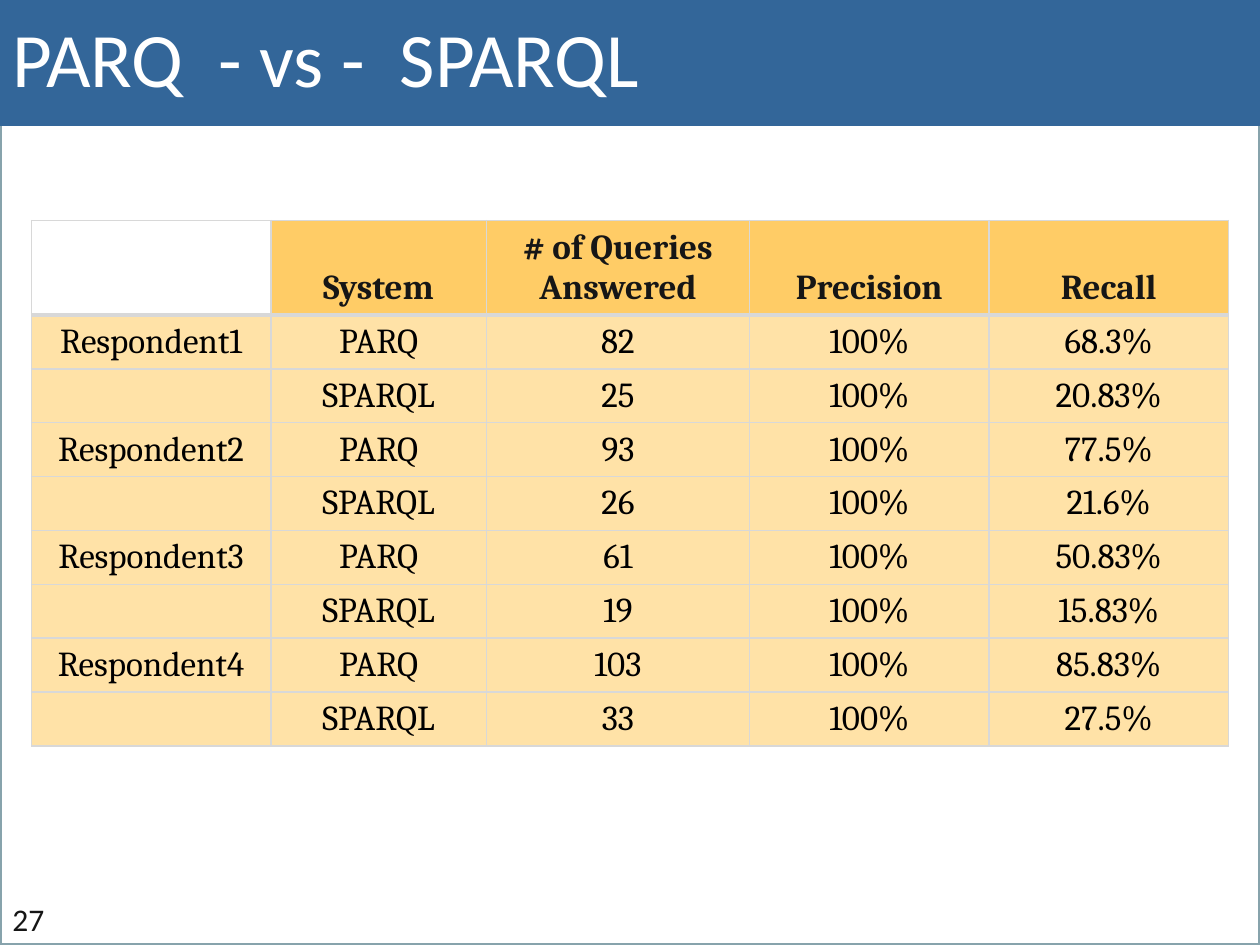
from dataclasses import dataclass

from lxml import etree
from pptx import Presentation
from pptx.dml.color import RGBColor
from pptx.enum.shapes import MSO_SHAPE
from pptx.enum.text import MSO_ANCHOR, PP_ALIGN
from pptx.oxml.ns import qn
from pptx.util import Pt

RECTANGLE = MSO_SHAPE.RECTANGLE
TOP, MIDDLE, BOTTOM = MSO_ANCHOR.TOP, MSO_ANCHOR.MIDDLE, MSO_ANCHOR.BOTTOM
LEFT, CENTER = PP_ALIGN.LEFT, PP_ALIGN.CENTER

TITLE = "PARQ  - vs -  SPARQL"
PAGE_NUMBER = "27"
HEADERS = ["", "System", "# of Queries Answered", "Precision", "Recall"]
RESULTS = [
    ("Respondent1", "PARQ", "82", "100%", "68.3%"),
    ("", "SPARQL", "25", "100%", "20.83%"),
    ("Respondent2", "PARQ", "93", "100%", "77.5%"),
    ("", "SPARQL", "26", "100%", "21.6%"),
    ("Respondent3", "PARQ", "61", "100%", "50.83%"),
    ("", "SPARQL", "19", "100%", "15.83%"),
    ("Respondent4", "PARQ", "103", "100%", "85.83%"),
    ("", "SPARQL", "33", "100%", "27.5%"),
]


@dataclass(frozen=True)
class Theme:
    background: str = "D8D8D8"
    panel: str = "FFFFFF"
    frame: str = "87A3AC"
    banner: str = "336699"
    title_text: str = "FFFFFF"
    dark_text: str = "161616"
    body_text: str = "000000"
    header_fill: str = "FFCC66"
    body_fill: str = "FFE2A7"
    border: str = "D8D8D8"
    heading_font: str = "Calibri"
    table_font: str = "Cambria"
    title_size: int = 44
    table_size: int = 20
    number_size: int = 18


THEME = Theme()
SLIDE_WIDTH, SLIDE_HEIGHT = 720, 540
BANNER_HEIGHT = 72
TABLE_LEFT, TABLE_TOP = 18, 126
COLUMN_WIDTHS = [136.8, 123.1, 150.5, 136.8, 136.8]
HEADER_HEIGHT, ROW_HEIGHT = 54, 30.8
THIN, THICK = 1, 3


def color(value):
    return RGBColor.from_string(value)


def write(text_frame, text, font, size, text_color, align=LEFT, bold=False):
    text_frame.text = text
    for paragraph in text_frame.paragraphs:
        paragraph.alignment = align
        for run in paragraph.runs:
            run.font.name = font
            run.font.size = Pt(size)
            run.font.bold = bold
            run.font.color.rgb = color(text_color)


def add_rectangle(slide, height, fill):
    shape = slide.shapes.add_shape(RECTANGLE, 0, 0, Pt(SLIDE_WIDTH), Pt(height))
    shape.shadow.inherit = False
    shape.fill.solid()
    shape.fill.fore_color.rgb = color(fill)
    shape.line.fill.background()
    return shape


def set_borders(cell, top, bottom):
    properties = cell._tc.get_or_add_tcPr()
    widths = {"a:lnL": THIN, "a:lnR": THIN, "a:lnT": top, "a:lnB": bottom}
    for position, (tag, width) in enumerate(widths.items()):
        line = etree.Element(qn(tag), w=str(Pt(width)))
        fill = etree.SubElement(line, qn("a:solidFill"))
        etree.SubElement(fill, qn("a:srgbClr"), val=THEME.border)
        properties.insert(position, line)


def add_results_table(slide):
    rows = [HEADERS, *RESULTS]
    heights = [HEADER_HEIGHT] + [ROW_HEIGHT] * len(RESULTS)
    table = slide.shapes.add_table(
        len(rows), len(HEADERS), Pt(TABLE_LEFT), Pt(TABLE_TOP),
        Pt(sum(COLUMN_WIDTHS)), Pt(sum(heights)),
    ).table
    for column, width in zip(table.columns, COLUMN_WIDTHS):
        column.width = Pt(width)
    for row_index, (values, height) in enumerate(zip(rows, heights)):
        table.rows[row_index].height = Pt(height)
        is_header = row_index == 0
        for column_index, value in enumerate(values):
            cell = table.cell(row_index, column_index)
            cell.vertical_anchor = BOTTOM if is_header else MIDDLE
            write(cell.text_frame, value, THEME.table_font, THEME.table_size,
                  THEME.dark_text if is_header else THEME.body_text, CENTER, is_header)
            if is_header and not value:
                cell.fill.background()
            else:
                cell.fill.solid()
                cell.fill.fore_color.rgb = color(
                    THEME.header_fill if is_header else THEME.body_fill)
            set_borders(cell, THICK if row_index == 1 else THIN,
                        THICK if is_header else THIN)


def main():
    presentation = Presentation()
    presentation.slide_width = Pt(SLIDE_WIDTH)
    presentation.slide_height = Pt(SLIDE_HEIGHT)
    slide = presentation.slides.add_slide(presentation.slide_layouts[6])
    slide.background.fill.solid()
    slide.background.fill.fore_color.rgb = color(THEME.background)

    panel = add_rectangle(slide, SLIDE_HEIGHT, THEME.panel)
    panel.line.color.rgb = color(THEME.frame)
    panel.line.width = Pt(2)

    banner = add_rectangle(slide, BANNER_HEIGHT, THEME.banner)
    banner.text_frame.vertical_anchor = TOP
    banner.text_frame.margin_top = Pt(6)
    write(banner.text_frame, TITLE, THEME.heading_font, THEME.title_size, THEME.title_text)

    add_results_table(slide)

    number = slide.shapes.add_textbox(0, Pt(510), Pt(36), Pt(30))
    number.text_frame.word_wrap = True
    number.text_frame.vertical_anchor = MIDDLE
    write(number.text_frame, PAGE_NUMBER, THEME.heading_font, THEME.number_size,
          THEME.dark_text)

    presentation.save("out.pptx")


if __name__ == "__main__":
    main()
